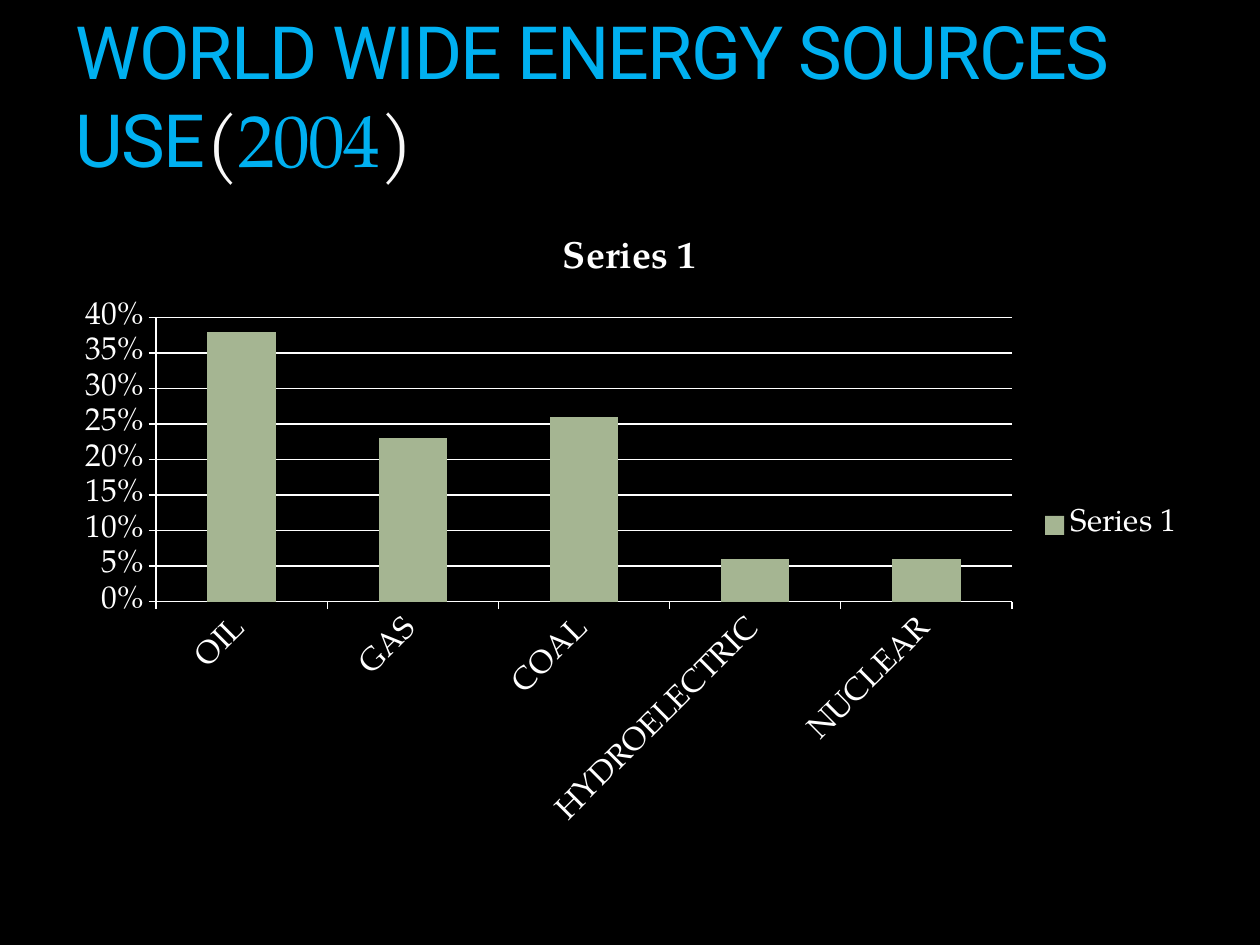
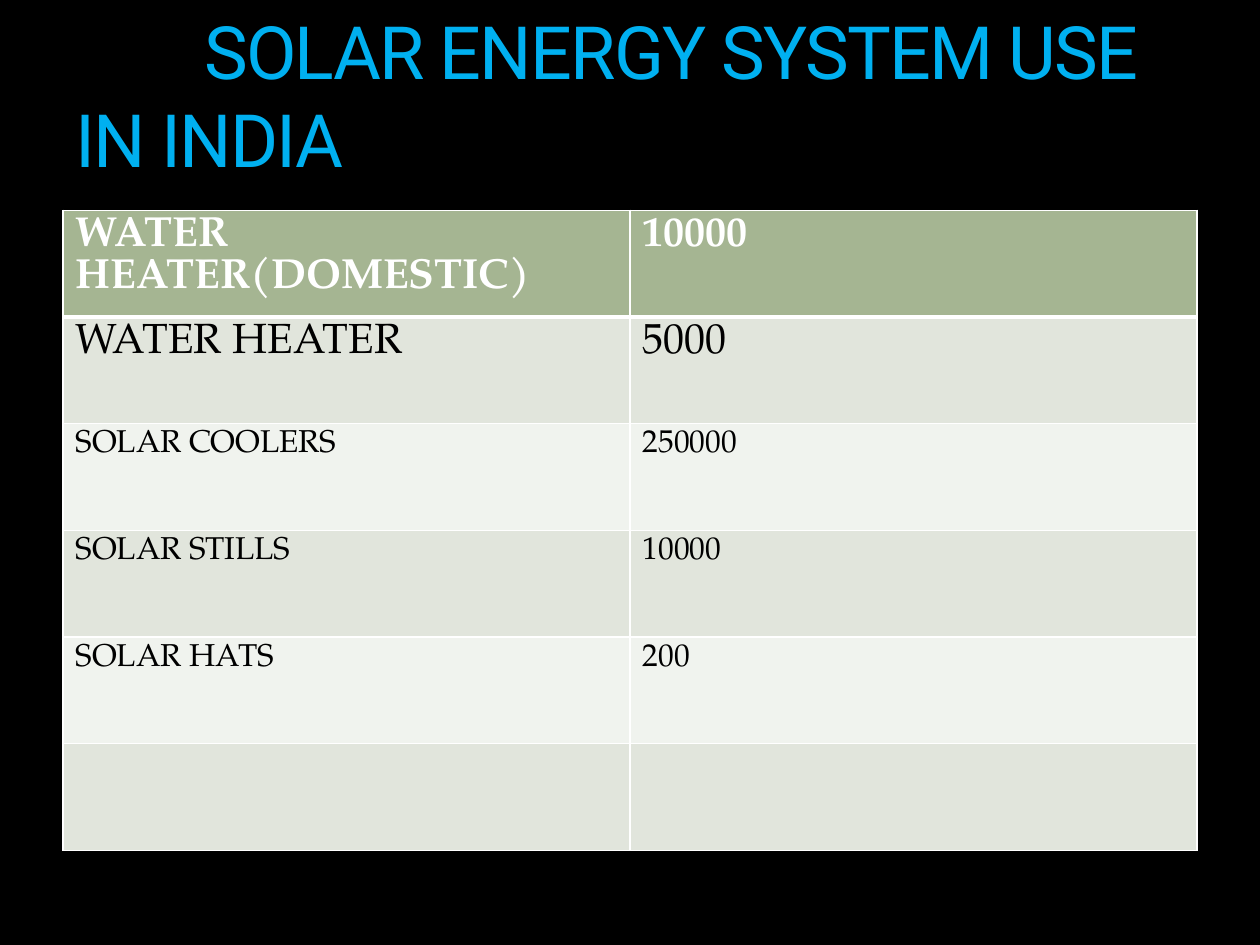
from lxml.etree import SubElement
from pptx import Presentation
from pptx.chart.data import CategoryChartData as ChartData
from pptx.dml.color import RGBColor
from pptx.enum.chart import XL_CHART_TYPE as ChartType, XL_LEGEND_POSITION as LegendPosition
from pptx.enum.chart import XL_TICK_MARK as TickMark
from pptx.enum.text import MSO_ANCHOR as Anchor, MSO_AUTO_SIZE as AutoSize, PP_ALIGN as Align
from pptx.oxml.ns import qn
from pptx.util import Inches, Pt

WIDTH, HEIGHT = Inches(10), Inches(7.5)
MARGIN = WIDTH * 0.05
CONTENT_WIDTH = WIDTH - 2 * MARGIN
CONTENT_TOP = Inches(1.67)
TITLE_BOX = (MARGIN, Inches(0.17), CONTENT_WIDTH, Inches(1.33))
CHART_BOX = (MARGIN, CONTENT_TOP, CONTENT_WIDTH, Inches(5))
TABLE_BOX = (MARGIN, CONTENT_TOP, CONTENT_WIDTH, Inches(5.08))

HEADING_FONT, BODY_FONT = "Roboto", "TeX Gyre Pagella"
BLACK, WHITE, PALE = "000000", "FFFFFF", "F9F9F9"
BLUE, SAGE, OUTLINE = "00B0F0", "A5B592", "3C4422"
BANDS = ("E1E5DC", "F0F3EE")

ENERGY_SHARES = {"OIL": 0.38, "GAS": 0.23, "COAL": 0.26, "HYDROELECTRIC": 0.06, "NUCLEAR": 0.06}
SOLAR_SYSTEMS = [
    ("WATER HEATER(DOMESTIC)", "10000", 24),
    ("WATER HEATER", "5000", 24),
    ("SOLAR COOLERS", "250000", 18),
    ("SOLAR STILLS", "10000", 18),
    ("SOLAR HATS", "200", 18),
    ("", "", 18),
]


def color(code):
    return RGBColor.from_string(code)


def fill_solid(fill, code):
    fill.solid()
    fill.fore_color.rgb = color(code)


def style_font(font, name, size, code, bold=False):
    font.name, font.size, font.bold = name, Pt(size), bold
    font.color.rgb = color(code)


def add_line(parent, tag, code, points, alpha=100, index=None):
    line = SubElement(parent, qn(tag), w=str(Pt(points)))
    fill = SubElement(SubElement(line, qn("a:solidFill")), qn("a:srgbClr"), val=code)
    if alpha < 100:
        SubElement(fill, qn("a:alpha"), val=str(alpha * 1000))
    if index is not None:
        parent.insert(index, line)


def add_page(deck, parts, indent=0):
    page = deck.slides.add_slide(deck.slide_layouts[5])
    fill_solid(page.background.fill, BLACK)
    title = page.shapes.title
    title.left, title.top, title.width, title.height = map(int, TITLE_BOX)
    frame = title.text_frame
    frame.auto_size, frame.vertical_anchor, frame.word_wrap = AutoSize.NONE, Anchor.BOTTOM, True
    para = frame.paragraphs[0]
    para.alignment = Align.LEFT
    para._p.get_or_add_pPr().set("indent", str(Inches(indent)))
    for text, font_name, code in parts:
        span = para.add_run()
        span.text = text
        style_font(span.font, font_name, 42, code)
        properties = span._r.get_or_add_rPr()
        properties.set("spc", "-100")
        add_line(properties, "a:ln", OUTLINE, 0.25, alpha=25, index=0)
    return page


def add_energy_chart(page, box):
    data = ChartData(number_format="0%")
    data.categories = list(ENERGY_SHARES)
    data.add_series("Series 1", list(ENERGY_SHARES.values()))
    chart = page.shapes.add_chart(ChartType.COLUMN_STACKED, *map(int, box), data).chart
    style_font(chart.font, BODY_FONT, 18, WHITE)

    chart.has_title = True
    heading = chart.chart_title.text_frame
    heading.text = "Series 1"
    style_font(heading.paragraphs[0].font, BODY_FONT, 21.6, WHITE, bold=True)
    chart.has_legend = True
    chart.legend.position = LegendPosition.RIGHT
    chart.legend.include_in_layout = False

    plot = chart.plots[0]
    plot.gap_width, plot.overlap, plot.vary_by_categories = 150, 100, False
    fill_solid(plot.series[0].format.fill, SAGE)

    shares, sources = chart.value_axis, chart.category_axis
    shares.has_major_gridlines = True
    shares.minimum_scale, shares.maximum_scale, shares.major_unit = 0, 0.4, 0.05
    shares.tick_labels.number_format = "0%"
    shares.tick_labels.number_format_is_linked = False
    for line in (shares.format.line, sources.format.line, shares.major_gridlines.format.line):
        line.color.rgb = color(WHITE)
        line.width = Pt(0.75)
    for axis in (shares, sources):
        axis.major_tick_mark, axis.minor_tick_mark = TickMark.OUTSIDE, TickMark.NONE
        style_font(axis.tick_labels.font, BODY_FONT, 18, WHITE)
    sources._element.find(qn("c:txPr")).find(qn("a:bodyPr")).set("rot", "-2700000")


def style_cell(cell, row, text, size):
    header = row == 0
    cell.text = text
    style_font(cell.text_frame.paragraphs[0].font, BODY_FONT, size, WHITE if header else BLACK, header)
    properties = cell._tc.get_or_add_tcPr()
    widths = {"a:lnL": 1, "a:lnR": 1, "a:lnT": 3 if row == 1 else 1, "a:lnB": 3 if header else 1}
    for tag, points in widths.items():
        add_line(properties, tag, WHITE, points)
    fill_solid(cell.fill, SAGE if header else BANDS[(row - 1) % 2])


def add_solar_table(page, box):
    table = page.shapes.add_table(len(SOLAR_SYSTEMS), 2, *map(int, box)).table
    for row, (system, count, size) in enumerate(SOLAR_SYSTEMS):
        for column, text in enumerate((system, count)):
            style_cell(table.cell(row, column), row, text, size)


def main():
    deck = Presentation()
    deck.slide_width, deck.slide_height = WIDTH, HEIGHT
    energy_title = [
        ("WORLD WIDE ENERGY SOURCES USE", HEADING_FONT, BLUE),
        ("(", BODY_FONT, PALE),
        ("2004", BODY_FONT, BLUE),
        (")", BODY_FONT, PALE),
    ]
    add_energy_chart(add_page(deck, energy_title), CHART_BOX)
    solar_title = [("SOLAR ENERGY SYSTEM USE IN INDIA", HEADING_FONT, BLUE)]
    add_solar_table(add_page(deck, solar_title, indent=1.02), TABLE_BOX)
    deck.save("out.pptx")


if __name__ == "__main__":
    main()
